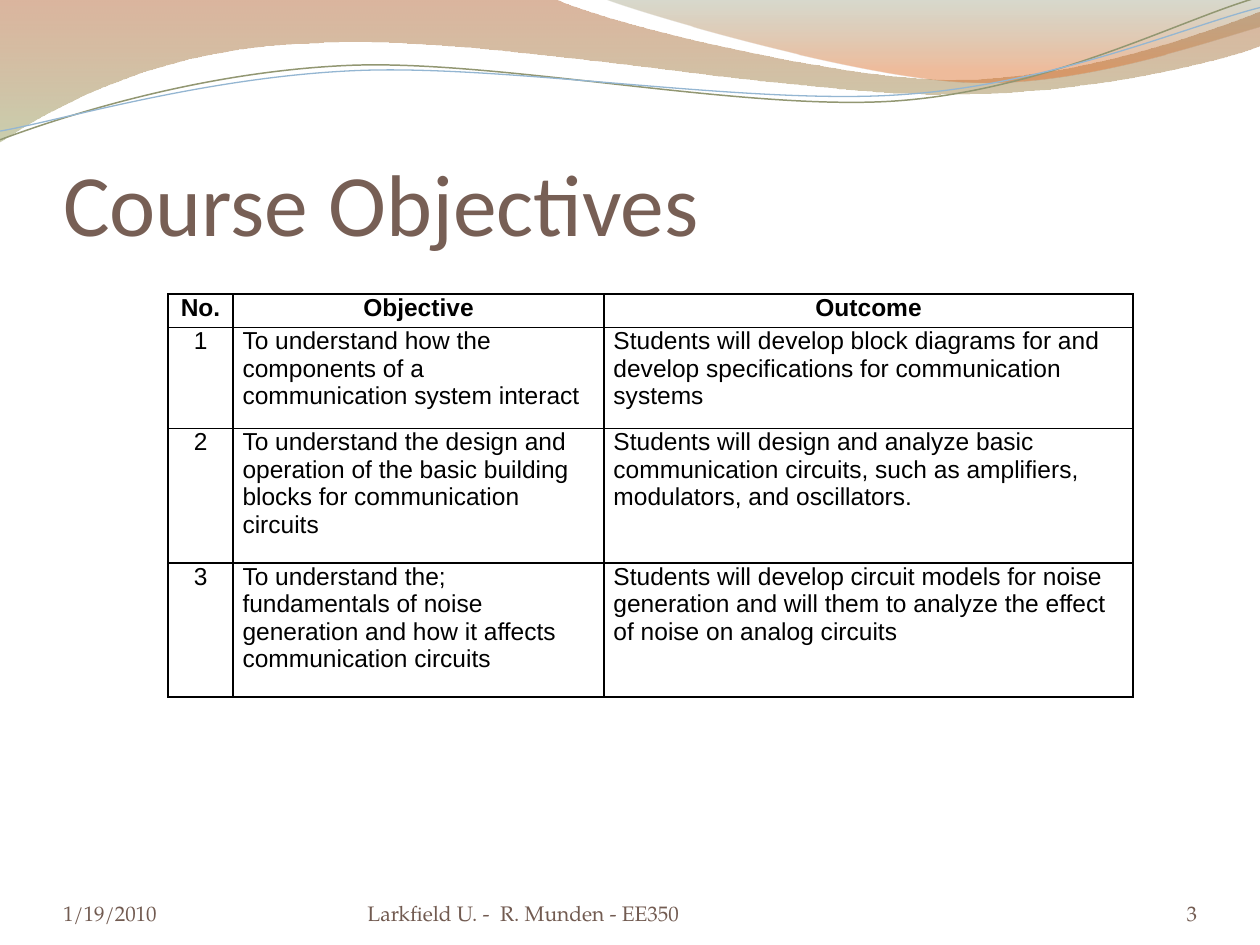
import dataclasses

import lxml.etree
import pptx
import pptx.dml.color
import pptx.enum.text
import pptx.oxml.ns
import pptx.util

Pt = pptx.util.Pt
RGB = pptx.dml.color.RGBColor.from_string
qn = pptx.oxml.ns.qn
ALIGN = pptx.enum.text.PP_ALIGN
BOTTOM = pptx.enum.text.MSO_ANCHOR.BOTTOM


@dataclasses.dataclass(frozen=True)
class Theme:
    title_font: str = "Calibri"
    footer_font: str = "TeX Gyre Pagella"
    table_font: str = "Arial"
    title_size: float = 50
    footer_size: float = 12
    table_size: float = 14
    title_color: str = "775F55"
    footer_color: str = "725B51"
    ink: str = "000000"
    # Gradient stops: position, colour, opacity in percent
    left_wave: tuple = ((0, "AF5C29", 45), (1, "9DA66B", 55))
    right_wave: tuple = ((0, "7D835B", 30), (0.8, "DD6B24", 45))
    # Lines: colour, width
    olive_line: tuple = ("929772", 0.85)
    blue_line: tuple = ("94B6D2", 0.75)


THEME = Theme()

# Outlines: a pair is a corner, six numbers are a Bezier segment
LEFT_WAVE = [(0, 0), (316.8, -0.7), (342.7, 12.2, 478, 45.4, 545.8, 45.4),
             (614.2, 45.4, 689.8, 18.7, 720, 6.5), (720.7, 25.9),
             (707.8, 31.7, 626.4, 54.7, 537.1, 54), (447.8, 54, 275, 20.2, 185, 24.5),
             (92.9, 25.9, 33.1, 59.8, -0.7, 81.4)]
RIGHT_WAVE = [(344.9, -0.7), (366.5, 7.9, 491, 44.6, 553.7, 46.8),
              (616.3, 49.7, 691.9, 23, 720, 15.1), (720, 0)]
OLIVE_LINE = [(0, 79.9), (34.6, 67, 113.8, 41, 199.4, 37.4),
              (284.4, 33.8, 427, 64.1, 513.4, 57.6), (599.8, 51.1, 675.4, 10.8, 718.6, -1.4)]
BLUE_LINE = [(0, 74.9), (33.8, 69.1, 117.4, 43.9, 203.8, 40.3),
             (290.2, 36.7, 429.8, 60.5, 516.2, 54), (601.9, 48.2, 677.5, 15.1, 720, 4.3)]

HEADER = ("No.", "Objective", "Outcome")
OBJECTIVES = [
    ("To understand how the components of a communication system interact",
     "Students will develop block diagrams for and develop specifications for "
     "communication systems"),
    ("To understand the design and operation of the basic building blocks for "
     "communication circuits",
     "Students will design and analyze basic communication circuits, such as "
     "amplifiers, modulators, and oscillators."),
    ("To understand the; fundamentals of noise generation and how it affects "
     "communication circuits",
     "Students will develop circuit models for noise generation and will them to "
     "analyze the effect of noise on analog circuits"),
]


def style(p, font, size, color, bold=False):
    p.font.name, p.font.size, p.font.bold = font, Pt(size), bold
    p.font.color.rgb = RGB(color)


def set_insets(frame, left=0, top=0, right=0, bottom=0):
    frame.margin_left, frame.margin_top = Pt(left), Pt(top)
    frame.margin_right, frame.margin_bottom = Pt(right), Pt(bottom)


def add_outline(s, x, y, outline, close):
    """Draw straight segments through all nodes, then merge triples into curves."""
    nodes = [(Pt(part[i]), Pt(part[i + 1]))
             for part in outline for i in range(0, len(part), 2)]
    builder = s.shapes.build_freeform(*nodes[0], scale=1.0)
    builder.add_line_segments(nodes[1:], close=close)
    sp = builder.convert_to_shape(Pt(x), Pt(y))
    sp.shadow.inherit = False
    segments = iter(list(sp.element.iter(qn("a:lnTo"))))
    for part in outline[1:]:
        lines = [next(segments) for _ in range(len(part) // 2)]
        if len(lines) == 3:
            curve = lxml.etree.Element(qn("a:cubicBezTo"))
            lines[0].addprevious(curve)
            for line in lines:
                curve.append(line[0])
                line.getparent().remove(line)
    return sp


def add_waves(s, x, y):
    # Gradient bands
    for outline, stops in ((LEFT_WAVE, THEME.left_wave), (RIGHT_WAVE, THEME.right_wave)):
        sp = add_outline(s, x, y, outline, close=True)
        sp.line.fill.background()
        sp.fill.gradient()
        sp.fill.gradient_angle = 270
        for stop, (position, color, _) in zip(sp.fill.gradient_stops, stops):
            stop.position, stop.color.rgb = position, RGB(color)
        for clr, (_, _, opacity) in zip(sp.element.iter(qn("a:srgbClr")), stops):
            lxml.etree.SubElement(clr, qn("a:alpha"), val=str(opacity * 1000))
    # Thin lines
    for outline, (color, width) in ((OLIVE_LINE, THEME.olive_line),
                                    (BLUE_LINE, THEME.blue_line)):
        sp = add_outline(s, x, y, outline, close=False)
        sp.fill.background()
        sp.line.color.rgb, sp.line.width = RGB(color), Pt(width)


def add_title(s, x, y, w, h, text):
    sp = s.shapes.title
    sp.left, sp.top, sp.width, sp.height = Pt(x), Pt(y), Pt(w), Pt(h)
    tf = sp.text_frame
    tf.text, tf.vertical_anchor = text, BOTTOM
    tf.auto_size = pptx.enum.text.MSO_AUTO_SIZE.NONE
    set_insets(tf, top=3.6)
    p = tf.paragraphs[0]
    p.alignment = ALIGN.LEFT
    style(p, THEME.title_font, THEME.title_size, THEME.title_color)
    sp.element.getparent().append(sp.element)  # in front of the waves


def add_footer(s, x, y, w, h, date, note, number):
    parts = ((0, 168, date, ALIGN.LEFT), (174, 264, note, ALIGN.LEFT),
             (w - 60, 60, number, ALIGN.RIGHT))
    for dx, width, text, align in parts:
        tf = s.shapes.add_textbox(Pt(x + dx), Pt(y), Pt(width), Pt(h)).text_frame
        tf.word_wrap, tf.vertical_anchor = True, BOTTOM
        set_insets(tf)
        p = tf.paragraphs[0]
        p.text, p.alignment = text, align
        style(p, THEME.footer_font, THEME.footer_size, THEME.footer_color)


def add_borders(cell, color, width=1):
    tc_pr = cell._tc.get_or_add_tcPr()
    for i, side in enumerate(("lnL", "lnR", "lnT", "lnB")):
        ln = lxml.etree.Element(qn("a:" + side), w=str(Pt(width)))
        fill = lxml.etree.SubElement(ln, qn("a:solidFill"))
        lxml.etree.SubElement(fill, qn("a:srgbClr"), val=color)
        tc_pr.insert(i, ln)


def add_objectives(s, x, y, col_widths, row_heights):
    rows = [HEADER] + [(str(i), *row) for i, row in enumerate(OBJECTIVES, 1)]
    table = s.shapes.add_table(len(rows), len(HEADER), Pt(x), Pt(y),
                               Pt(sum(col_widths)), Pt(sum(row_heights))).table
    table.horz_banding = False
    for column, width in zip(table.columns, col_widths):
        column.width = Pt(width)
    for row, height in zip(table.rows, row_heights):
        row.height = Pt(height)
    for r, texts in enumerate(rows):
        for c, text in enumerate(texts):
            cell = table.cell(r, c)
            cell.fill.background()
            set_insets(cell, left=5.4, right=5.4)
            add_borders(cell, THEME.ink)
            p = cell.text_frame.paragraphs[0]
            p.text = text
            p.alignment = ALIGN.CENTER if r == 0 or c == 0 else ALIGN.LEFT
            if r == 0 or (c == 1 and r > 1):
                p.space_after = Pt(6)
            style(p, THEME.table_font, THEME.table_size, THEME.ink, bold=r == 0)


def main():
    prs = pptx.Presentation()
    prs.slide_width, prs.slide_height = Pt(720), Pt(540)
    s = prs.slides.add_slide(prs.slide_layouts[5])
    add_waves(s, 0, 0)
    add_title(s, 36, 55, 648, 90, "Course Objectives")
    add_footer(s, 36, 500.5, 648, 28.75, "1/19/2010", "Larkfield U. -  R. Munden - EE350", "3")
    add_objectives(s, 96, 168, (37.2, 212, 302.4), (19.2, 57.6, 76.8, 76.8))
    prs.save("out.pptx")


if __name__ == "__main__":
    main()
